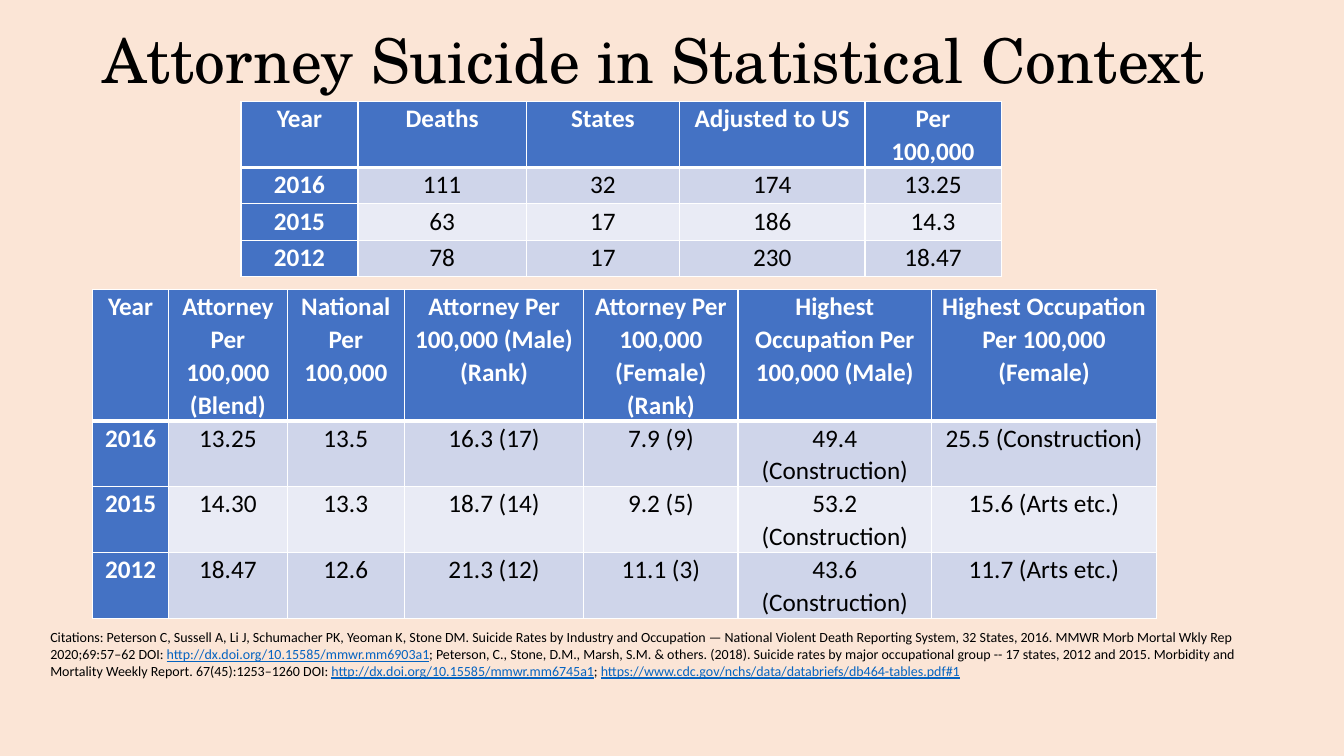
from lxml.etree import SubElement
from pptx import Presentation
from pptx.dml.color import RGBColor
from pptx.enum.text import MSO_ANCHOR, MSO_AUTO_SIZE, PP_ALIGN
from pptx.oxml.ns import qn
from pptx.util import Inches, Pt

THEME = {
    "background": "FBE5D6", "text": "000000", "white": "FFFFFF",
    "header": "4472C4", "bands": ["CFD5EA", "E9EBF5"], "link": "0563C1",
    "title_font": "TeX Gyre Schola", "body_font": "Calibri",
    "title_size": 44, "table_size": 18, "citation_size": 10,
}


def format_font(font, color, **values):
    font.color.rgb = RGBColor.from_string(color)
    for name, value in values.items():
        setattr(font, name, value)


def add_borders(cell, widths):
    properties = cell._tc.get_or_add_tcPr()
    for side, width in widths.items():
        line = SubElement(properties, qn(f"a:ln{side}"), w=str(Pt(width)))
        fill = SubElement(line, qn("a:solidFill"))
        SubElement(fill, qn("a:srgbClr"), val=THEME["white"])


presentation = Presentation()
presentation.slide_width, presentation.slide_height = Inches(13.33), Inches(7.5)
slide = presentation.slides.add_slide(presentation.slide_layouts[5])
slide.background.fill.solid()
slide.background.fill.fore_color.rgb = RGBColor.from_string(THEME["background"])

# Title
title = slide.shapes.title
title_box = {"left": 0.92, "top": 0.15, "width": 11.5, "height": 0.96}
for name, value in title_box.items():
    setattr(title, name, Inches(value))
title.text_frame.text = "Attorney Suicide in Statistical Context"
title.text_frame.auto_size = MSO_AUTO_SIZE.NONE
title.text_frame.vertical_anchor = MSO_ANCHOR.MIDDLE
paragraph = title.text_frame.paragraphs[0]
paragraph.alignment = PP_ALIGN.LEFT
paragraph.line_spacing = 0.9
format_font(paragraph.font, THEME["text"], name=THEME["title_font"],
            size=Pt(THEME["title_size"]))

# Table contents
tables = [
    {
        "box": (2.39, 1.01, 7.54, 1.71),
        "columns": [1.16, 1.67, 1.52, 1.84, 1.35],
        "rows": [0.36, 0.36, 0.36, 0.36],
        "cells": [
            ["Year", "Deaths", "States", "Adjusted to US", "Per 100,000"],
            ["2016", "111", "32", "174", "13.25"],
            ["2015", "63", "17", "186", "14.3"],
            ["2012", "78", "17", "230", "18.47"],
        ],
    },
    {
        "box": (0.92, 2.87, 10.55, 3.15),
        "columns": [0.75, 1.18, 1.16, 1.78, 1.53, 1.92, 2.23],
        "rows": [0.85, 0.42, 0.42, 0.42],
        "cells": [
            ["Year", "Attorney Per 100,000 (Blend)", "National Per\n100,000",
             "Attorney Per 100,000 (Male) (Rank)",
             "Attorney Per 100,000 (Female) (Rank)",
             "Highest Occupation Per 100,000 (Male)",
             "Highest Occupation Per 100,000 (Female)"],
            ["2016", "13.25", "13.5", "16.3 (17)", "7.9 (9)",
             "49.4 (Construction)", "25.5 (Construction)"],
            ["2015", "14.30", "13.3", "18.7 (14)", "9.2 (5)",
             "53.2 (Construction)", "15.6 (Arts etc.)"],
            ["2012", "18.47", "12.6", "21.3 (12)", "11.1 (3)",
             "43.6 (Construction)", "11.7 (Arts etc.)"],
        ],
    },
]
cell_margins = {"margin_left": 0.07, "margin_right": 0.07,
                "margin_top": 0, "margin_bottom": 0}

# Tables
for content in tables:
    frame = slide.shapes.add_table(len(content["rows"]), len(content["columns"]),
                                   *map(Inches, content["box"]))
    table = frame.table
    for column, width in zip(table.columns, content["columns"]):
        column.width = Inches(width)
    for row, height in zip(table.rows, content["rows"]):
        row.height = Inches(height)
    frame.height = Inches(content["box"][3])

    for row_index, values in enumerate(content["cells"]):
        for column_index, value in enumerate(values):
            cell = table.cell(row_index, column_index)
            is_heading = row_index == 0 or column_index == 0
            add_borders(cell, {"L": 1, "R": 1, "T": 3 if row_index == 1 else 1,
                               "B": 3 if row_index == 0 else 1})
            band = THEME["bands"][(row_index - 1) % 2]
            cell.fill.solid()
            cell.fill.fore_color.rgb = RGBColor.from_string(
                THEME["header"] if is_heading else band)
            for name, margin in cell_margins.items():
                setattr(cell, name, Inches(margin))
            cell.text_frame.text = value
            for paragraph in cell.text_frame.paragraphs:
                paragraph.alignment = PP_ALIGN.CENTER
                paragraph.line_spacing = 1.07
                format_font(paragraph.runs[0].font,
                            THEME["white" if is_heading else "text"],
                            name=THEME["body_font"], bold=is_heading,
                            size=Pt(THEME["table_size"]))

# Citations
citations = [
    "Citations: Peterson C, Sussell A, Li J, Schumacher PK, Yeoman K, Stone DM. "
    "Suicide Rates by Industry and Occupation — National Violent Death Reporting "
    "System, 32 States, 2016. MMWR Morb Mortal Wkly Rep 2020;69:57–62 DOI: ",
    "http://dx.doi.org/10.15585/mmwr.mm6903a1",
    "; Peterson, C., Stone, D.M., Marsh, S.M. & others. (2018). Suicide rates by "
    "major occupational group -- 17 states, 2012 and 2015. Morbidity and Mortality "
    "Weekly Report. 67(45):1253–1260 DOI: ",
    "http://dx.doi.org/10.15585/mmwr.mm6745a1",
    "; ",
    "https://www.cdc.gov/nchs/data/databriefs/db464-tables.pdf#1",
]
citation_box = slide.shapes.add_textbox(Inches(0.4), Inches(6.19),
                                        Inches(12.25), Inches(0.61))
citation_box.text_frame.word_wrap = True
citation_box.text_frame.auto_size = MSO_AUTO_SIZE.SHAPE_TO_FIT_TEXT
paragraph = citation_box.text_frame.paragraphs[0]
for text in citations:
    run = paragraph.add_run()
    run.text = text
    is_address = text.startswith("http")
    format_font(run.font, THEME["link" if is_address else "text"],
                name=THEME["body_font"], underline=is_address,
                size=Pt(THEME["citation_size"]))

presentation.save("out.pptx")
